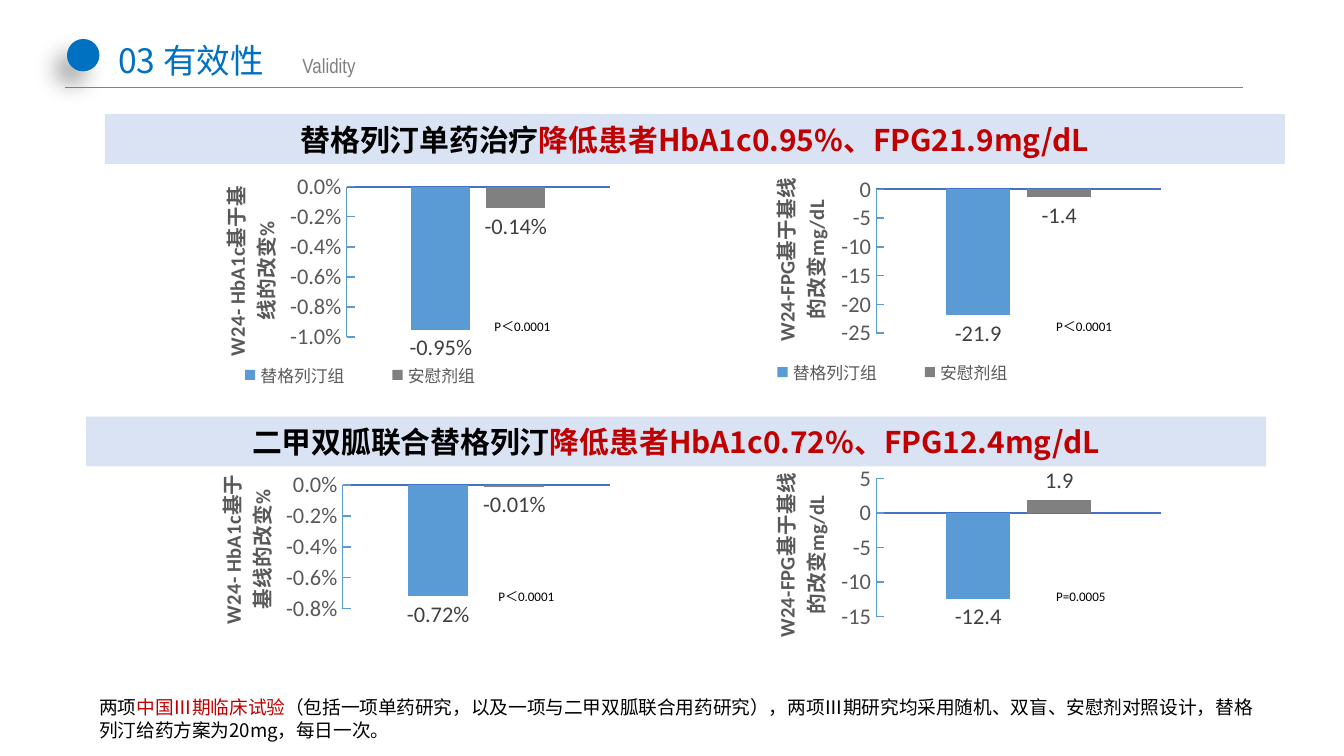
from lxml.etree import SubElement
from pptx import Presentation
from pptx.chart.data import CategoryChartData
from pptx.dml.color import RGBColor
from pptx.enum.chart import XL_CHART_TYPE as ChartType, XL_LABEL_POSITION as LabelPos
from pptx.enum.chart import XL_LEGEND_POSITION as LegendPos, XL_TICK_LABEL_POSITION as TickLabel
from pptx.enum.chart import XL_TICK_MARK as TickMark
from pptx.enum.shapes import MSO_CONNECTOR as Connector, MSO_SHAPE as Shape
from pptx.enum.text import MSO_ANCHOR as Anchor, MSO_AUTO_SIZE as AutoSize, PP_ALIGN as Align
from pptx.oxml import parse_xml
from pptx.oxml.ns import nsdecls, qn
from pptx.util import Inches, Pt

COLORS = {"blue": "0070C0", "gray": "808080", "band": "DAE3F3", "black": "000000",
          "red": "C00000", "bar": "5B9BD5", "axis": "4472C4", "label": "404040",
          "tick": "595959"}
CJK, LATIN, NARROW = "Noto Sans CJK SC", "Calibri", "Arial Narrow"

TITLE = [("03 有效性", 18, CJK, "blue"), ("\t", 11, NARROW, "gray"),
         ("Validity", 11, NARROW, "gray")]
BANDS = [
    (0.78, 0.85, "替格列汀单药治疗", "降低患者HbA1c0.95%、FPG21.9mg/dL"),
    (0.64, 3.1, "二甲双胍联合替格列汀", "降低患者HbA1c0.72%、FPG12.4mg/dL"),
]
FOOTNOTE = [
    ("两项", 10, CJK, "black"),
    ("中国Ⅲ期临床试验", 10, CJK, "red"),
    ("（包括一项单药研究，以及一项与二甲双胍联合用药研究），两项Ⅲ期研究均采用随机、双盲、"
     "安慰剂对照设计，替格列汀给药方案为20mg，每日一次。", 10, CJK, "black"),
]
GROUPS = [("替格列汀组", "bar"), ("安慰剂组", "gray")]
HBA1C = {"title": "W24- HbA1c基于基线的改变%", "axis": "0.0%", "label": "0.00%"}
FPG = {"title": "W24-FPG基于基线的改变mg/dL", "axis": "General", "label": "General"}
# frame and plot: left, top, width, height; scale: minimum, maximum, step
CHARTS = [
    {"kind": HBA1C, "values": (-0.0095, -0.0014), "scale": (-0.01, 0, 0.002),
     "frame": (1.38, 1.26, 3.23, 1.71), "plot": (2.58, 1.39, 1.96, 1.12),
     "title_at": (1.6, 1.35), "legend": (1.51, 2.69, 2.34, 0.2)},
    {"kind": FPG, "values": (-21.9, -1.4), "scale": (-25, 0, 5),
     "frame": (5.47, 1.28, 3.23, 1.67), "plot": (6.52, 1.41, 2.12, 1.07),
     "title_at": (5.69, 1.29), "legend": (5.47, 2.67, 2.34, 0.2)},
    {"kind": HBA1C, "values": (-0.0072, -0.0001), "scale": (-0.008, 0, 0.002),
     "frame": (1.35, 3.48, 3.26, 1.51), "plot": (2.55, 3.61, 1.99, 0.92),
     "title_at": (1.57, 3.5)},
    {"kind": FPG, "values": (-12.4, 1.9), "scale": (-15, 5, 5),
     "frame": (5.47, 3.43, 3.23, 1.61), "plot": (6.52, 3.56, 2.12, 1.03),
     "title_at": (5.69, 3.49)},
]
P_VALUES = [(3.58, 2.32, "P＜0.0001"), (7.76, 2.32, "P＜0.0001"),
            (3.61, 4.33, "P＜0.0001"), (7.76, 4.33, "P=0.0005")]


def rgb(name):
    return RGBColor.from_string(COLORS[name])


def style(font, size, color, name=LATIN, bold=False):
    font.size, font.name, font.bold = Pt(size), name, bold
    font.color.rgb = rgb(color)


def add_runs(para, runs, bold=False):
    for text, size, name, color in runs:
        span = para.add_run()
        span.text = text
        style(span.font, size, color, name, bold)
        latin = span.font._element.find(qn("a:latin"))
        latin.addnext(parse_xml(f'<a:ea {nsdecls("a")} typeface="{CJK}"/>'))


def add_text(slide, box, runs):
    frame = slide.shapes.add_textbox(*map(Inches, box)).text_frame
    frame.word_wrap = True
    add_runs(frame.paragraphs[0], runs)


def add_filled(slide, kind, box, color):
    shape = slide.shapes.add_shape(kind, *map(Inches, box))
    shape.shadow.inherit = False
    shape.fill.solid()
    shape.fill.fore_color.rgb = rgb(color)
    shape.line.fill.background()
    return shape


def place(element, frame, box, inner=False):
    """Pin a chart part to a slide box, given as fractions of the chart frame."""
    for old in element.findall(qn("c:layout")):
        element.remove(old)
    layout = parse_xml(f'<c:layout {nsdecls("c")}/>')
    manual = SubElement(layout, qn("c:manualLayout"))
    if inner:
        SubElement(manual, qn("c:layoutTarget")).set("val", "inner")
    for side in "xy":
        SubElement(manual, qn(f"c:{side}Mode")).set("val", "edge")
    fractions = [(box[0] - frame[0]) / frame[2], (box[1] - frame[1]) / frame[3]]
    if len(box) == 4:
        fractions += [box[2] / frame[2], box[3] / frame[3]]
    for key, value in zip("xywh", fractions):
        SubElement(manual, qn(f"c:{key}")).set("val", f"{value:.4f}")
    before = [child for tag in ("c:legendPos", "c:tx") for child in element.findall(qn(tag))]
    if before:
        before[0].addnext(layout)
    else:
        element.insert(0, layout)


def add_bar_chart(slide, item):
    kind, frame = item["kind"], item["frame"]
    data = CategoryChartData()
    data.categories = ["1"]
    for (name, _), value in zip(GROUPS, item["values"]):
        data.add_series(name, [value])
    chart = slide.shapes.add_chart(ChartType.COLUMN_CLUSTERED, *map(Inches, frame), data).chart
    chart.has_title = False
    style(chart.font, 10, "black")

    plot = chart.plots[0]
    plot.vary_by_categories = False
    plot.gap_width, plot.overlap = 219, -27
    for series, (_, color) in zip(plot.series, GROUPS):
        series.invert_if_negative = False
        series.format.fill.solid()
        series.format.fill.fore_color.rgb = rgb(color)
        labels = series.data_labels
        labels.show_value = True
        labels.position = LabelPos.OUTSIDE_END
        labels.number_format, labels.number_format_is_linked = kind["label"], False
        style(labels.font, 12, "label")

    categories, values = chart.category_axis, chart.value_axis
    categories.tick_label_position = TickLabel.NONE
    for axis, mark, color, width in ((categories, TickMark.NONE, "axis", 1),
                                     (values, TickMark.INSIDE, "bar", 0.75)):
        axis.has_major_gridlines = False
        axis.major_tick_mark, axis.minor_tick_mark = mark, TickMark.NONE
        axis.format.line.color.rgb = rgb(color)
        axis.format.line.width = Pt(width)
        style(axis.tick_labels.font, 12, "tick")
    values.minimum_scale, values.maximum_scale, values.major_unit = item["scale"]
    values.tick_labels.number_format = kind["axis"]
    values.tick_labels.number_format_is_linked = False

    title = values.axis_title.text_frame
    add_runs(title.paragraphs[0], [(kind["title"], 11, LATIN, "tick")], bold=True)
    title._txBody.bodyPr.set("rot", "-5400000")
    title._txBody.bodyPr.set("vert", "horz")
    place(values.axis_title._element, frame, item["title_at"])
    place(chart._chartSpace.chart.plotArea, frame, item["plot"], inner=True)

    chart.has_legend = "legend" in item
    if chart.has_legend:
        chart.legend.position = LegendPos.BOTTOM
        chart.legend.include_in_layout = False
        style(chart.legend.font, 9, "tick")
        place(chart.legend._element, frame, item["legend"])


def add_header(slide):
    dot = add_filled(slide, Shape.OVAL, (0.5, 0.29, 0.24, 0.24), "blue")
    effects = dot._element.spPr.find(qn("a:effectLst"))
    effects.append(parse_xml(
        f'<a:outerShdw {nsdecls("a")} blurRad="{Pt(12)}" dist="{Pt(10)}" dir="7800000">'
        f'<a:srgbClr val="{COLORS["black"]}"><a:alpha val="32000"/></a:srgbClr></a:outerShdw>'))
    add_filled(slide, Shape.OVAL, (0.5, 0.3, 0.23, 0.23), "blue")

    title = slide.shapes.title
    title.left, title.top, title.width, title.height = map(Inches, (0.81, 0.26, 2.46, 0.56))
    frame = title.text_frame
    frame.auto_size, frame.vertical_anchor = AutoSize.NONE, Anchor.TOP
    frame.margin_left = frame.margin_right = Inches(0.07)
    frame.margin_top = frame.margin_bottom = Inches(0.04)
    para = frame.paragraphs[0]
    para.alignment = Align.LEFT
    tabs = SubElement(para._p.get_or_add_pPr(), qn("a:tabLst"))
    SubElement(tabs, qn("a:tab"), pos=str(Inches(1.37)), algn="l")
    add_runs(para, TITLE)

    rule = slide.shapes.add_connector(
        Connector.STRAIGHT, *map(Inches, (0.48, 0.65, 9.25, 0.65)))
    rule.line.color.rgb, rule.line.width = rgb("gray"), Pt(0.5)
    SubElement(rule._element.spPr, qn("a:effectLst"))


def main():
    deck = Presentation()
    deck.slide_width = Inches(10)
    deck.slide_height = deck.slide_width * 9 // 16
    slide = deck.slides.add_slide(deck.slide_layouts[5])
    add_header(slide)
    for item in CHARTS:
        add_bar_chart(slide, item)
    for left, top, therapy, result in BANDS:
        band = add_filled(slide, Shape.RECTANGLE, (left, top, 8.78, 0.37), "band")
        para = band.text_frame.paragraphs[0]
        para.alignment = Align.CENTER
        add_runs(para, [(therapy, 16, CJK, "black"), (result, 16, CJK, "red")], bold=True)
    add_text(slide, (0.64, 5.13, 8.78, 0.44), FOOTNOTE)
    for left, top, text in P_VALUES:
        add_text(slide, (left, top, 0.86, 0.22), [(text, 7, LATIN, "black")])
    deck.save("out.pptx")


if __name__ == "__main__":
    main()
